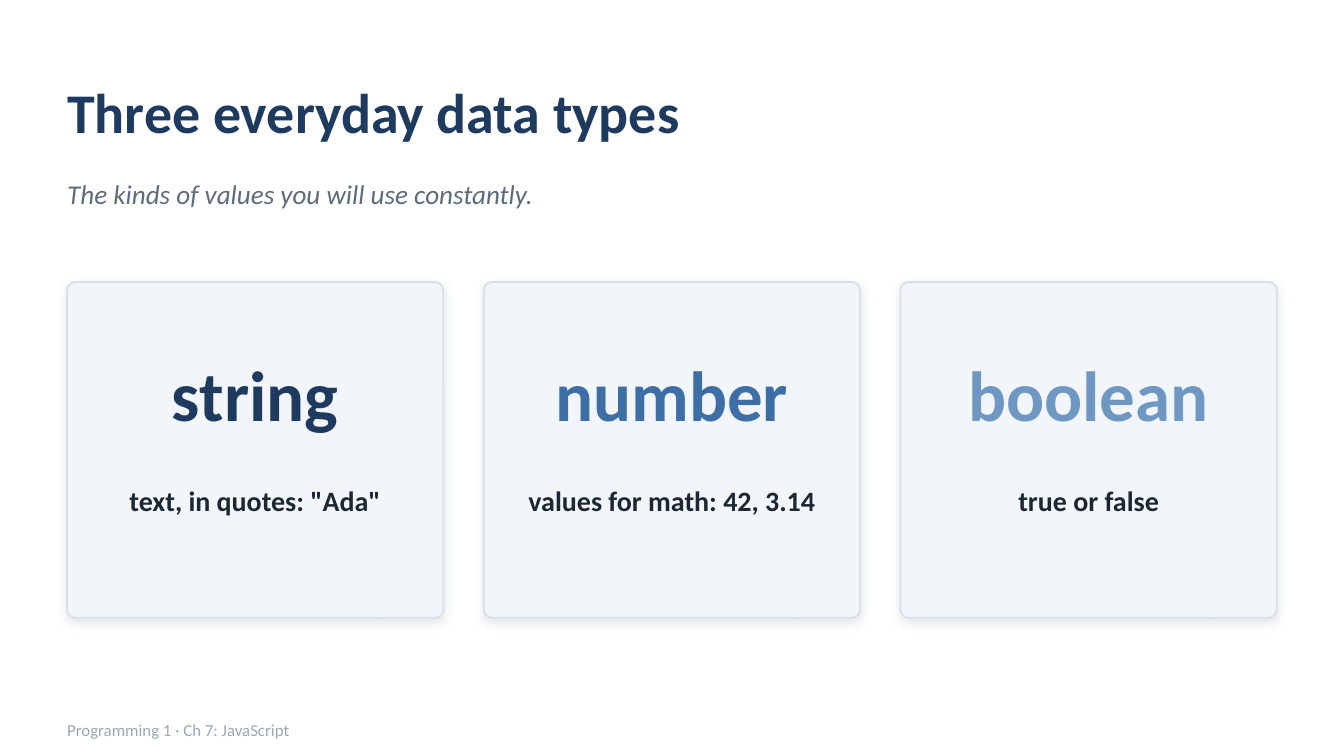
from dataclasses import dataclass

from lxml.etree import SubElement
from pptx import Presentation
from pptx.dml.color import RGBColor
from pptx.enum.shapes import MSO_SHAPE as Preset
from pptx.enum.text import MSO_ANCHOR as Anchor, PP_ALIGN as Align
from pptx.oxml.ns import qn
from pptx.shapes.autoshape import Shape
from pptx.slide import Slide
from pptx.util import Cm, Pt

FONT = "Calibri"
COLORS = {
    "background": "FFFFFF",
    "navy": "1F3A5F",
    "blue": "3D6EA5",
    "sky": "6E97C2",
    "ink": "1B2733",
    "slate": "5E6B79",
    "mist": "9AA8B6",
    "card": "F2F5F9",
    "border": "D8E0E9",
}

# Lengths in centimetres
SLIDE_WIDTH, SLIDE_HEIGHT = 25.4, 14.29
MARGIN = 1.27
CONTENT_WIDTH = SLIDE_WIDTH - 2 * MARGIN
CARD_TOP, CARD_WIDTH, CARD_HEIGHT = 5.33, 7.11, 6.35
NAME_INSET, MEANING_INSET = 0.25, 0.38


@dataclass(frozen=True)
class Box:
    left: float
    top: float
    width: float
    height: float


@dataclass(frozen=True)
class Style:
    size: float
    color: str
    bold: bool = False
    italic: bool = False
    align: Align = Align.LEFT
    anchor: Anchor = Anchor.MIDDLE


@dataclass(frozen=True)
class DataType:
    name: str
    meaning: str
    color: str


DATA_TYPES = [
    DataType("string", 'text, in quotes: "Ada"', "navy"),
    DataType("number", "values for math: 42, 3.14", "blue"),
    DataType("boolean", "true or false", "sky"),
]


def rgb(name: str) -> RGBColor:
    return RGBColor.from_string(COLORS[name])


def add_text(slide: Slide, text: str, box: Box, style: Style) -> None:
    frame = slide.shapes.add_textbox(
        Cm(box.left), Cm(box.top), Cm(box.width), Cm(box.height)
    ).text_frame
    frame.word_wrap = True
    frame.vertical_anchor = style.anchor
    frame.margin_left = frame.margin_right = 0
    frame.margin_top = frame.margin_bottom = 0
    paragraph = frame.paragraphs[0]
    paragraph.text = text
    paragraph.alignment = style.align
    font = paragraph.font
    font.name = FONT
    font.size = Pt(style.size)
    font.bold = style.bold
    font.italic = style.italic
    font.color.rgb = rgb(style.color)


def add_soft_shadow(shape: Shape) -> None:
    """Cast a blurred, mostly transparent shadow straight down."""
    shape.shadow.inherit = False
    effects = shape._element.spPr.find(qn("a:effectLst"))
    shadow = SubElement(
        effects, qn("a:outerShdw"), blurRad=str(Pt(6)), dist=str(Pt(2)),
        dir="5400000", algn="bl", rotWithShape="0",
    )
    color = SubElement(shadow, qn("a:srgbClr"), val=COLORS["mist"])
    SubElement(color, qn("a:alpha"), val="28000")


def add_card(slide: Slide, data_type: DataType, left: float) -> None:
    card = slide.shapes.add_shape(
        Preset.ROUNDED_RECTANGLE,
        Cm(left), Cm(CARD_TOP), Cm(CARD_WIDTH), Cm(CARD_HEIGHT),
    )
    card.adjustments[0] = 0.024
    card.fill.solid()
    card.fill.fore_color.rgb = rgb("card")
    card.line.color.rgb = rgb("border")
    card.line.width = Pt(1)
    add_soft_shadow(card)

    add_text(
        slide, data_type.name,
        Box(left + NAME_INSET, CARD_TOP + 0.89, CARD_WIDTH - 2 * NAME_INSET, 2.41),
        Style(38, data_type.color, bold=True, align=Align.CENTER),
    )
    add_text(
        slide, data_type.meaning,
        Box(left + MEANING_INSET, CARD_TOP + 3.81, CARD_WIDTH - 2 * MEANING_INSET, 2.03),
        Style(15, "ink", bold=True, align=Align.CENTER, anchor=Anchor.TOP),
    )


def main() -> None:
    deck = Presentation()
    deck.slide_width, deck.slide_height = Cm(SLIDE_WIDTH), Cm(SLIDE_HEIGHT)
    slide = deck.slides.add_slide(deck.slide_layouts[6])
    slide.background.fill.solid()
    slide.background.fill.fore_color.rgb = rgb("background")

    add_text(slide, "Three everyday data types",
             Box(MARGIN, 1.02, CONTENT_WIDTH, 2.16), Style(30, "navy", bold=True))
    add_text(slide, "The kinds of values you will use constantly.",
             Box(MARGIN, 3.15, CONTENT_WIDTH, 1.02), Style(14.5, "slate", italic=True))

    card_pitch = (CONTENT_WIDTH - CARD_WIDTH) / (len(DATA_TYPES) - 1)
    for column, data_type in enumerate(DATA_TYPES):
        add_card(slide, data_type, MARGIN + column * card_pitch)

    add_text(slide, "Programming 1 · Ch 7: JavaScript",
             Box(MARGIN, 13.46, 20.32, 0.66), Style(9, "mist"))

    deck.save("out.pptx")


if __name__ == "__main__":
    main()
